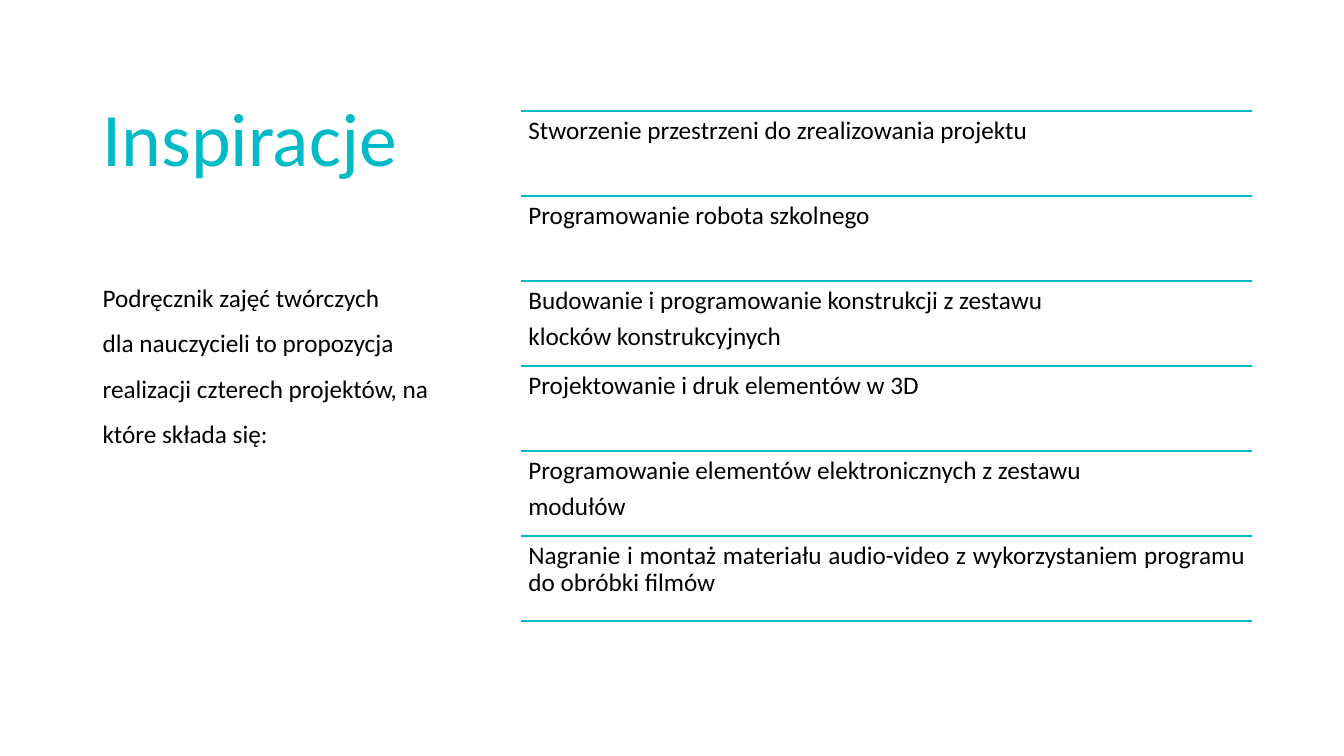
from dataclasses import dataclass

from lxml.etree import SubElement
from pptx import Presentation
from pptx.dml.color import RGBColor
from pptx.enum.shapes import MSO_CONNECTOR
from pptx.enum.text import MSO_ANCHOR, MSO_AUTO_SIZE, PP_ALIGN
from pptx.oxml.ns import qn
from pptx.shapes.group import GroupShape
from pptx.text.text import TextFrame
from pptx.util import Inches, Pt

FONT = "Calibri"
COLORS = {"accent": "00BAC8", "text": "000000", "background": "FFFFFF"}
LIST_LEFT, LIST_RIGHT = 5.17, 12.42
LIST_TOP, LIST_BOTTOM = 1.1, 6.16


@dataclass(frozen=True)
class Project:
    lines: tuple[str, ...]
    align: PP_ALIGN = PP_ALIGN.LEFT


PROJECTS = (
    Project(("Stworzenie przestrzeni do zrealizowania projektu",)),
    Project(("Programowanie robota szkolnego",)),
    Project(("Budowanie i programowanie konstrukcji z zestawu",
             "klocków konstrukcyjnych")),
    Project(("Projektowanie i druk elementów w 3D",)),
    Project(("Programowanie elementów elektronicznych z zestawu", "modułów"),
            PP_ALIGN.JUSTIFY),
    Project(("Nagranie i montaż materiału audio-video z wykorzystaniem "
             "programu do obróbki filmów",), PP_ALIGN.JUSTIFY),
)
INTRO = (
    "Podręcznik zajęć twórczych",
    "dla nauczycieli to propozycja realizacji czterech projektów, "
    "na które składa się:",
)


def write_paragraphs(frame: TextFrame, lines: tuple[str, ...], size: float,
                     color: str, align: PP_ALIGN = PP_ALIGN.LEFT,
                     spacing: float = 1.0, after: float = 0) -> None:
    frame.word_wrap = True
    frame.vertical_anchor = MSO_ANCHOR.TOP
    for index, line in enumerate(lines):
        para = frame.paragraphs[0] if index == 0 else frame.add_paragraph()
        para.alignment = align
        para.line_spacing = spacing
        para.space_before = Pt(0)
        para.space_after = Pt(after)
        span = para.add_run()
        span.text = line
        span.font.name = FONT
        span.font.size = Pt(size)
        span.font.color.rgb = RGBColor.from_string(COLORS[color])


def add_rule(group: GroupShape, top: float) -> None:
    rule = group.shapes.add_connector(
        MSO_CONNECTOR.STRAIGHT, Inches(LIST_LEFT), Inches(top),
        Inches(LIST_RIGHT), Inches(top))
    rule.line.color.rgb = RGBColor.from_string(COLORS["accent"])
    rule.line.width = Pt(1)
    SubElement(rule._element.spPr, qn("a:effectLst"))


def add_project(group: GroupShape, project: Project, top: float,
                height: float) -> None:
    box = group.shapes.add_textbox(
        Inches(LIST_LEFT), Inches(top),
        Inches(LIST_RIGHT - LIST_LEFT), Inches(height))
    frame = box.text_frame
    frame.margin_left = frame.margin_right = Inches(0.07)
    frame.margin_top = frame.margin_bottom = Inches(0.07)
    write_paragraphs(frame, project.lines, 18, "text", project.align, 0.9, 6)


def main() -> None:
    deck = Presentation()
    deck.slide_width, deck.slide_height = Inches(13.33), Inches(7.5)
    page = deck.slides.add_slide(deck.slide_layouts[5])
    page.background.fill.solid()
    page.background.fill.fore_color.rgb = RGBColor.from_string(
        COLORS["background"])

    title = page.shapes.title
    title.left, title.top = Inches(0.92), Inches(0.85)
    title.width, title.height = Inches(4.41), Inches(5.9)
    title.text_frame.auto_size = MSO_AUTO_SIZE.NONE
    write_paragraphs(title.text_frame, ("Inspiracje",), 54, "accent")

    group = page.shapes.add_group_shape()
    row_height = (LIST_BOTTOM - LIST_TOP) / len(PROJECTS)
    for index, project in enumerate(PROJECTS):
        top = LIST_TOP + index * row_height
        add_rule(group, top)
        add_project(group, project, top, row_height)
    add_rule(group, LIST_BOTTOM)

    intro = page.shapes.add_textbox(
        Inches(0.92), Inches(2.6), Inches(3.83), Inches(1.87))
    intro.text_frame.auto_size = MSO_AUTO_SIZE.SHAPE_TO_FIT_TEXT
    write_paragraphs(intro.text_frame, INTRO, 18, "text", spacing=1.5)

    deck.save("out.pptx")


if __name__ == "__main__":
    main()
